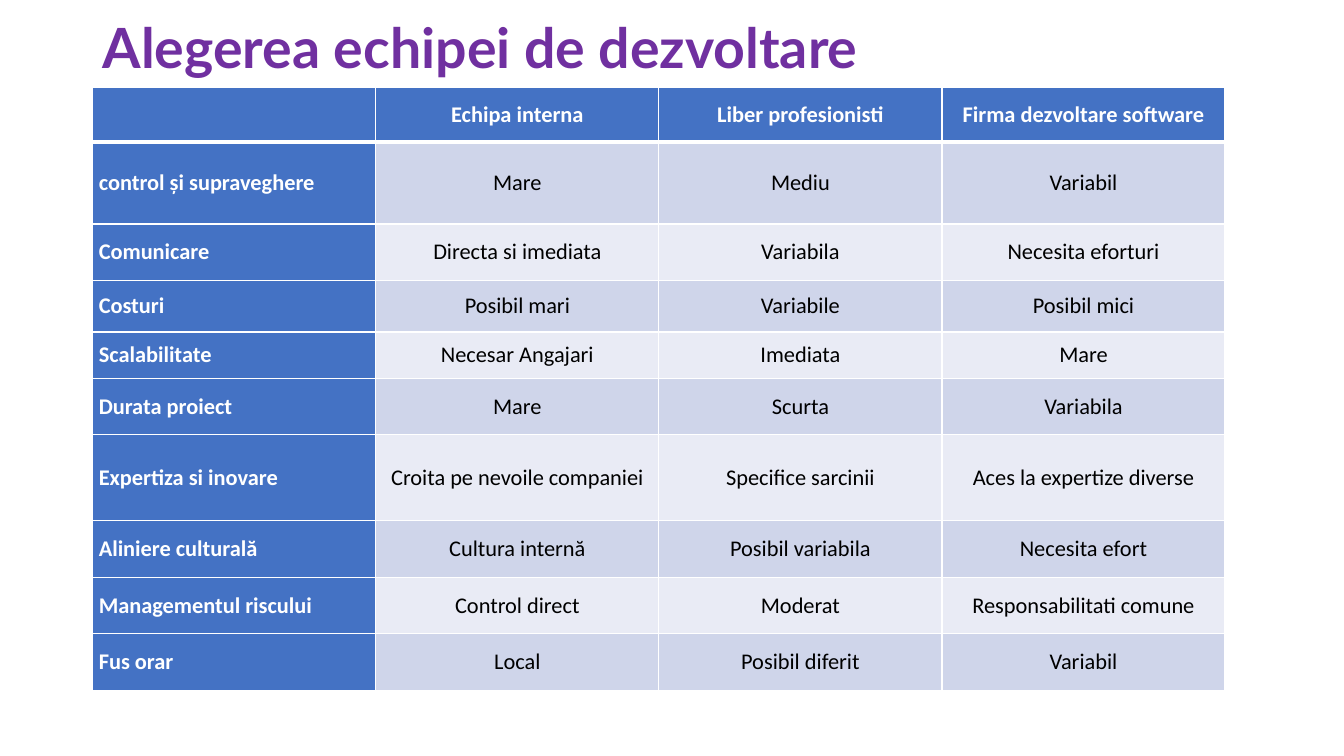
import dataclasses
import lxml.etree
import pptx
import pptx.dml.color
import pptx.enum.text
import pptx.oxml.ns
import pptx.util

Inches = pptx.util.Inches
Pt = pptx.util.Pt
Align = pptx.enum.text.PP_ALIGN
Anchor = pptx.enum.text.MSO_ANCHOR


@dataclasses.dataclass(frozen=True)
class Theme:
    title: str = "7030A0"
    head: str = "4472C4"
    bands: tuple = ("CFD5EA", "E9EBF5")
    light: str = "FFFFFF"
    dark: str = "000000"
    title_font: str = "Lato"
    body_font: str = "Calibri"
    title_size: float = 39.6
    body_size: float = 16
    rule: float = 1
    head_rule: float = 3


THEME = Theme()
TITLE = "Alegerea echipei de dezvoltare"
ROWS = [
    (0.54, "", "Echipa interna", "Liber profesionisti", "Firma dezvoltare software"),
    (0.81, "control și supraveghere", "Mare", "Mediu", "Variabil"),
    (0.56, "Comunicare", "Directa si imediata", "Variabila", "Necesita eforturi"),
    (0.51, "Costuri", "Posibil mari", "Variabile", "Posibil mici"),
    (0.46, "Scalabilitate", "Necesar Angajari", "Imediata", "Mare"),
    (0.56, "Durata proiect", "Mare", "Scurta", "Variabila"),
    (0.85, "Expertiza si inovare", "Croita pe nevoile companiei", "Specifice sarcinii",
     "Aces la expertize diverse"),
    (0.56, "Aliniere culturală", "Cultura internă", "Posibil variabila", "Necesita efort"),
    (0.56, "Managementul riscului", "Control direct", "Moderat", "Responsabilitati comune"),
    (0.56, "Fus orar", "Local", "Posibil diferit", "Variabil"),
]


def color(code):
    return pptx.dml.color.RGBColor.from_string(code)


def set_font(para, face, size, code, bold):
    font = para.font
    font.name = face
    font.size = Pt(size)
    font.bold = bold
    font.color.rgb = color(code)


def add_edge(cell, side, width):
    qn = pptx.oxml.ns.qn
    props = cell._tc.get_or_add_tcPr()
    line = lxml.etree.SubElement(props, qn(f"a:ln{side}"), w=str(Pt(width)))
    fill = lxml.etree.SubElement(line, qn("a:solidFill"))
    lxml.etree.SubElement(fill, qn("a:srgbClr"), val=THEME.light)


def add_title(slide, left, top, width, height):
    box = slide.shapes.add_textbox(Inches(left), Inches(top), Inches(width), Inches(height))
    frame = box.text_frame
    frame.word_wrap = True
    frame.vertical_anchor = Anchor.MIDDLE
    para = frame.paragraphs[0]
    para.text = TITLE
    para.line_spacing = 0.9
    set_font(para, THEME.title_font, THEME.title_size, THEME.title, True)


def fill_cell(cell, text, row, col):
    head = row == 0 or col == 0
    cell.margin_left = cell.margin_right = Inches(0.06)
    cell.margin_top = cell.margin_bottom = 0
    cell.vertical_anchor = Anchor.MIDDLE
    para = cell.text_frame.paragraphs[0]
    para.text = text
    para.alignment = Align.CENTER if col else Align.LEFT
    set_font(para, THEME.body_font, THEME.body_size, THEME.light if head else THEME.dark, head)
    thick = {("B", 0), ("T", 1)}
    for side in "LRTB":
        add_edge(cell, side, THEME.head_rule if (side, row) in thick else THEME.rule)
    cell.fill.solid()
    cell.fill.fore_color.rgb = color(THEME.head if head else THEME.bands[(row - 1) % 2])


def add_grid(slide, left, top, width, height):
    count = len(ROWS[0]) - 1
    table = slide.shapes.add_table(
        len(ROWS), count, Inches(left), Inches(top), Inches(width), Inches(height)
    ).table
    for col in table.columns:
        col.width = Inches(width / count)
    scale = height / sum(row[0] for row in ROWS)
    for row, (tall, *texts) in enumerate(ROWS):
        table.rows[row].height = Inches(tall * scale)
        for col, text in enumerate(texts):
            fill_cell(table.cell(row, col), text, row, col)


def main():
    deck = pptx.Presentation()
    deck.slide_width = Inches(13.33)
    deck.slide_height = Inches(7.5)
    slide = deck.slides.add_slide(deck.slide_layouts[6])
    add_title(slide, 0.92, 0.14, 11.5, 0.72)
    add_grid(slide, 0.92, 0.87, 11.23, 5.98)
    deck.save("out.pptx")


if __name__ == "__main__":
    main()
